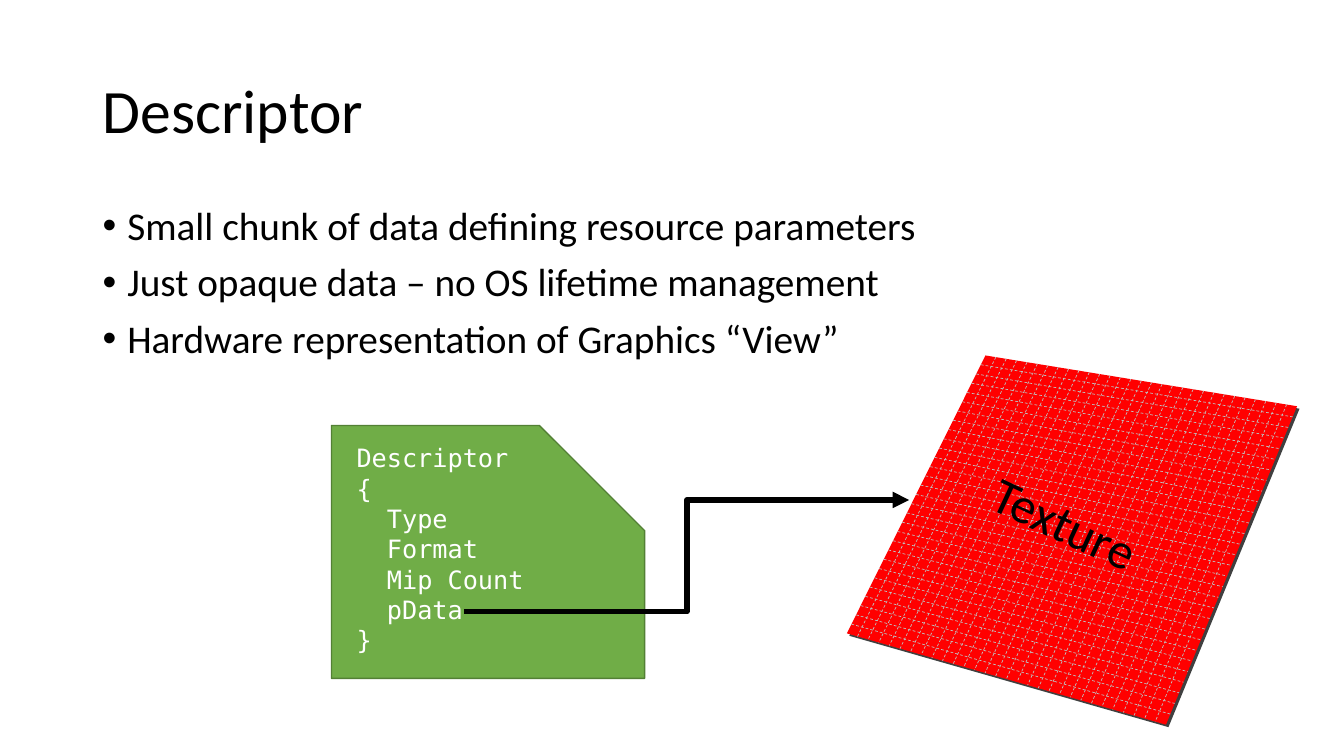
from lxml.etree import SubElement
from pptx import Presentation
from pptx.dml.color import RGBColor
from pptx.enum.dml import MSO_LINE_DASH_STYLE as Dash
from pptx.enum.shapes import MSO_CONNECTOR as Connector, MSO_SHAPE as Shape
from pptx.enum.text import MSO_ANCHOR as Anchor, PP_ALIGN as Align
from pptx.oxml.ns import qn
from pptx.util import Pt

BODY_FONT = "Calibri"
CODE_FONT = "DejaVu Sans Mono"
BLACK, WHITE = "000000", "FFFFFF"
BULLETS = [
    "Small chunk of data defining resource parameters",
    "Just opaque data – no OS lifetime management",
    "Hardware representation of Graphics “View”",
]
DESCRIPTOR_LINES = [
    ("Descriptor", 0), ("{", 0), ("Type", 1), ("Format", 1),
    ("Mip Count", 1), ("pData", 1), ("}", 0),
]
TEXTURE_CORNERS = [(718, 259), (945, 296), (849.5, 528), (617, 461.5)]
GRID_CELLS = 30


def color(value):
    return RGBColor.from_string(value)


def add_span(para, text, size, font, hue):
    span = para.add_run()
    span.text = text
    span.font.size = Pt(size)
    span.font.name = font
    span.font.color.rgb = color(hue)


def next_para(frame, index):
    return frame.paragraphs[0] if index == 0 else frame.add_paragraph()


def indent(para, left, first=0):
    props = para._p.get_or_add_pPr()
    props.set("marL", str(Pt(left)))
    props.set("indent", str(Pt(first)))
    return props


def set_title(page, text):
    title = page.shapes.title
    title.left, title.top, title.width, title.height = Pt(67.7), Pt(29.5), Pt(844.6), Pt(106.6)
    frame = title.text_frame
    frame.word_wrap = True
    frame.vertical_anchor = Anchor.MIDDLE
    para = frame.paragraphs[0]
    para.alignment = Align.LEFT
    para.line_spacing = 0.9
    add_span(para, text, 44.9, BODY_FONT, BLACK)


def add_bullets(page, lines):
    box = page.shapes.add_textbox(Pt(67.7), Pt(146.9), Pt(844.6), Pt(349.2))
    frame = box.text_frame
    frame.word_wrap = True
    for index, line in enumerate(lines):
        para = next_para(frame, index)
        para.line_spacing = 0.9
        para.space_before = Pt(10.2)
        props = indent(para, 18, -18)
        SubElement(props, qn("a:buFont"), typeface="Arial")
        SubElement(props, qn("a:buChar"), char="•")
        add_span(para, line, 28.6, BODY_FONT, BLACK)


def add_descriptor(page, lines):
    card = page.shapes.add_shape(Shape.SNIP_1_RECTANGLE, Pt(241.5), Pt(310), Pt(228.2), Pt(184.3))
    card.adjustments[0] = 0.416
    card.shadow.inherit = False
    card.fill.solid()
    card.fill.fore_color.rgb = color("70AD47")
    card.line.color.rgb = color("538035")
    card.line.width = Pt(1)
    frame = card.text_frame
    frame.word_wrap = True
    frame.vertical_anchor = Anchor.MIDDLE
    frame.margin_left = Pt(18.3)
    frame.margin_bottom = Pt(46.6)
    for index, (text, level) in enumerate(lines):
        para = next_para(frame, index)
        para.alignment = Align.LEFT
        indent(para, 22.15 * level)
        add_span(para, text, 18.4, CODE_FONT, WHITE)


def add_quad(page, corners, hue, offset=0):
    points = [(Pt(x + offset), Pt(y + offset)) for x, y in corners]
    builder = page.shapes.build_freeform(*points[0])
    builder.add_line_segments(points[1:], close=True)
    quad = builder.convert_to_shape()
    quad.shadow.inherit = False
    quad.fill.solid()
    quad.fill.fore_color.rgb = color(hue)
    quad.line.fill.background()


def between(start, end, share):
    return tuple(Pt(a + (b - a) * share) for a, b in zip(start, end))


def add_grid(page, corners, cells):
    top_left, top_right, bottom_right, bottom_left = corners
    edges = [
        (top_left, bottom_left, top_right, bottom_right),
        (top_left, top_right, bottom_left, bottom_right),
    ]
    builder = page.shapes.build_freeform(*between(top_left, top_right, 0))
    for near_start, near_end, far_start, far_end in edges:
        for step in range(1, cells):
            builder.move_to(*between(near_start, near_end, step / cells))
            builder.add_line_segments([between(far_start, far_end, step / cells)], close=False)
    grid = builder.convert_to_shape()
    grid.shadow.inherit = False
    grid.fill.background()
    grid.line.color.rgb = color("BFBFBF")
    grid.line.width = Pt(0.5)
    grid.line.dash_style = Dash.DASH


def add_texture_label(page, text):
    box = page.shapes.add_textbox(Pt(696.5), Pt(350.5), Pt(160), Pt(60))
    box.rotation = 25
    frame = box.text_frame
    frame.word_wrap = True
    frame.vertical_anchor = Anchor.MIDDLE
    para = frame.paragraphs[0]
    para.alignment = Align.CENTER
    add_span(para, text, 36.7, BODY_FONT, BLACK)


def add_elbow_arrow(page, start, end):
    arrow = page.shapes.add_connector(Connector.ELBOW, *map(Pt, start + end))
    arrow.line.color.rgb = color(BLACK)
    arrow.line.width = Pt(4)
    SubElement(arrow.line._get_or_add_ln(), qn("a:tailEnd"), type="triangle")
    SubElement(arrow._element.spPr, qn("a:effectLst"))


def main():
    deck = Presentation()
    deck.slide_width, deck.slide_height = Pt(979.2), Pt(550.8)
    page = deck.slides.add_slide(deck.slide_layouts[5])
    set_title(page, "Descriptor")
    add_bullets(page, BULLETS)
    add_descriptor(page, DESCRIPTOR_LINES)
    add_quad(page, TEXTURE_CORNERS, "404040", offset=1.8)
    add_quad(page, TEXTURE_CORNERS, "FF0000")
    add_grid(page, TEXTURE_CORNERS, GRID_CELLS)
    add_texture_label(page, "Texture")
    add_elbow_arrow(page, (338.4, 445.7), (662.4, 364.3))
    deck.save("out.pptx")


if __name__ == "__main__":
    main()
